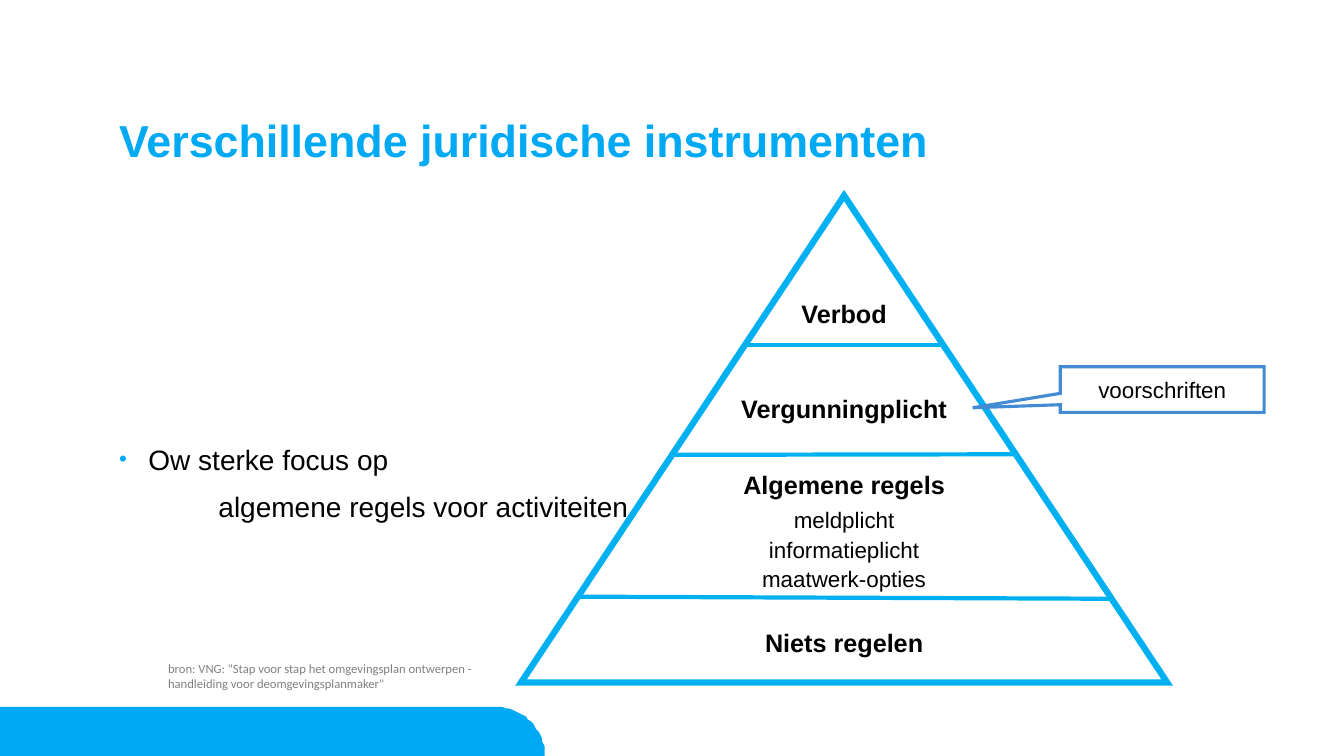
from dataclasses import dataclass
from math import cos, pi, sin

from lxml.etree import SubElement
from pptx import Presentation
from pptx.dml.color import RGBColor
from pptx.enum.shapes import MSO_CONNECTOR as Connector, MSO_SHAPE as Shape
from pptx.enum.text import MSO_ANCHOR as Anchor, MSO_AUTO_SIZE as AutoSize, PP_ALIGN as Align
from pptx.oxml.ns import qn
from pptx.util import Pt


@dataclass(frozen=True)
class Theme:
    brand: str = "00A9F3"
    outline: str = "00B0F0"
    callout: str = "438CD4"
    ink: str = "000000"
    muted: str = "808080"
    paper: str = "FFFFFF"
    font: str = "Arial"
    source_font: str = "Calibri"
    title: int = 32
    body: int = 20
    level: int = 18
    detail: int = 16
    source: int = 9


THEME = Theme()
FLUSH = dict(margin_left=0, margin_top=0, margin_right=0, margin_bottom=0)


def set_values(target, values):
    for key, value in values.items():
        setattr(target, key, value)


def place(target, box):
    set_values(target, dict(zip(("left", "top", "width", "height"), map(Pt, box))))


def style_font(font, size, color=THEME.ink, bold=False, name=THEME.font):
    set_values(font, dict(name=name, size=Pt(size), bold=bold))
    font.color.rgb = RGBColor.from_string(color)


def style_line(line, color, width):
    line.color.rgb = RGBColor.from_string(color)
    line.width = Pt(width)


def miter(shape):
    SubElement(shape.line._get_or_add_ln(), qn("a:miter"), lim="800000")


def add_label(slide, box, lines, align=Align.CENTER, anchor=Anchor.MIDDLE):
    frame = slide.shapes.add_textbox(*map(Pt, box)).text_frame
    set_values(frame, dict(word_wrap=True, vertical_anchor=anchor))
    for index, (text, after, look) in enumerate(lines):
        line = frame.add_paragraph() if index else frame.paragraphs[0]
        set_values(line, dict(text=text, alignment=align, space_after=Pt(after)))
        style_font(line.runs[0].font, **look)


def add_footer(slide, box):
    left, top, width, height = box
    right, bottom = left + width, top + height
    curve = [
        (right - height + height * sin(step * pi / 48), bottom - height * cos(step * pi / 48))
        for step in range(25)
    ]
    builder = slide.shapes.build_freeform(left, bottom, scale=Pt(1))
    builder.add_line_segments([(left, top), *curve], close=True)
    band = builder.convert_to_shape()
    band.shadow.inherit = False
    band.fill.solid()
    band.fill.fore_color.rgb = RGBColor.from_string(THEME.brand)
    band.line.fill.background()


def add_title(slide, box):
    title = slide.shapes.title
    place(title, box)
    frame = title.text_frame
    set_values(frame, dict(FLUSH, auto_size=AutoSize.NONE, vertical_anchor=Anchor.TOP))
    frame.text = "Verschillende juridische instrumenten"
    set_values(frame.paragraphs[0], dict(alignment=Align.LEFT, line_spacing=0.9))
    style_font(frame.paragraphs[0].runs[0].font, THEME.title, THEME.brand, True)


def add_focus(slide, box):
    body = slide.placeholders[1]
    place(body, box)
    frame = body.text_frame
    set_values(frame, dict(FLUSH, auto_size=AutoSize.NONE, vertical_anchor=Anchor.TOP))
    frame.text = "Ow sterke focus op\nalgemene regels voor activiteiten"
    focus, rules = frame.paragraphs
    for line, margin, indent, before in ((focus, 21, -21, 0), (rules, 71, 0, 4.8)):
        properties = line._p.get_or_add_pPr()
        properties.set("marL", str(Pt(margin)))
        properties.set("indent", str(Pt(indent)))
        if line is focus:
            color = SubElement(properties, qn("a:buClr"))
            SubElement(color, qn("a:srgbClr"), val=THEME.brand)
            SubElement(properties, qn("a:buSzPct"), val="80000")
            SubElement(properties, qn("a:buFont"), typeface=THEME.font)
            SubElement(properties, qn("a:buChar"), char="•")
        else:
            SubElement(properties, qn("a:buNone"))
        set_values(line, dict(line_spacing=1.2, space_before=Pt(before), alignment=Align.LEFT))
        style_font(line.runs[0].font, THEME.body)


def add_pyramid(slide, box):
    left, top, width, height = box
    apex = left + width / 2
    pyramid = slide.shapes.add_shape(Shape.ISOSCELES_TRIANGLE, *map(Pt, box))
    pyramid.shadow.inherit = False
    pyramid.fill.solid()
    pyramid.fill.fore_color.rgb = RGBColor.from_string(THEME.paper)
    style_line(pyramid.line, THEME.outline, 4.5)
    miter(pyramid)

    for left_depth, right_depth in ((106.5, 106.5), (185.2, 184.8), (286.5, 288)):
        slope = width / 2 / height
        divider = slide.shapes.add_connector(
            Connector.STRAIGHT,
            Pt(apex - left_depth * slope), Pt(top + left_depth),
            Pt(apex + right_depth * slope), Pt(top + right_depth),
        )
        style_line(divider.line, THEME.outline, 3)
        SubElement(divider._element.spPr, qn("a:effectLst"))

    heading = dict(size=THEME.level, bold=True)
    detail = dict(size=THEME.detail)
    levels = (
        (84.2, 127, 27.4, [("Verbod", 0, heading)]),
        (152, 173, 27.4, [("Vergunningplicht", 0, heading)]),
        (239.4, 208, 82.8, [
            ("Algemene regels", 5, heading),
            ("meldplicht", 2, detail),
            ("informatieplicht", 2, detail),
            ("maatwerk-opties", 0, detail),
        ]),
        (319, 165, 27.4, [("Niets regelen", 0, heading)]),
    )
    for middle, label_width, label_height, lines in levels:
        add_label(
            slide,
            (apex - label_width / 2, top + middle - label_height / 2, label_width, label_height),
            lines,
        )


def add_callout(slide, box):
    callout = slide.shapes.add_shape(Shape.RECTANGULAR_CALLOUT, *map(Pt, box))
    callout.shadow.inherit = False
    callout.adjustments[0], callout.adjustments[1] = -0.93, 0.4
    callout.fill.background()
    style_line(callout.line, THEME.callout, 2.25)
    miter(callout)
    frame = callout.text_frame
    set_values(frame, dict(text="voorschriften", vertical_anchor=Anchor.MIDDLE))
    frame.paragraphs[0].alignment = Align.CENTER
    style_font(frame.paragraphs[0].runs[0].font, THEME.detail)


def add_source(slide, box):
    text = 'bron: VNG: "Stap voor stap het omgevingsplan ontwerpen - handleiding voor deomgevingsplanmaker"'
    look = dict(size=THEME.source, color=THEME.muted, name=THEME.source_font)
    add_label(slide, box, [(text, 0, look)], Align.LEFT, Anchor.TOP)


def main():
    deck = Presentation()
    set_values(deck, dict(slide_width=Pt(960), slide_height=Pt(540)))
    slide = deck.slides.add_slide(deck.slide_layouts[1])
    add_footer(slide, (0, 505.2, 389.2, 34.8))
    add_title(slide, (85, 85, 790, 56.8))
    add_focus(slide, (85, 311, 790, 185))
    add_pyramid(slide, (372.2, 139.7, 461.5, 347.8))
    add_source(slide, (113, 468.7, 236, 29))
    add_callout(slide, (757.4, 262, 145.6, 32.5))
    deck.save("out.pptx")


if __name__ == "__main__":
    main()
